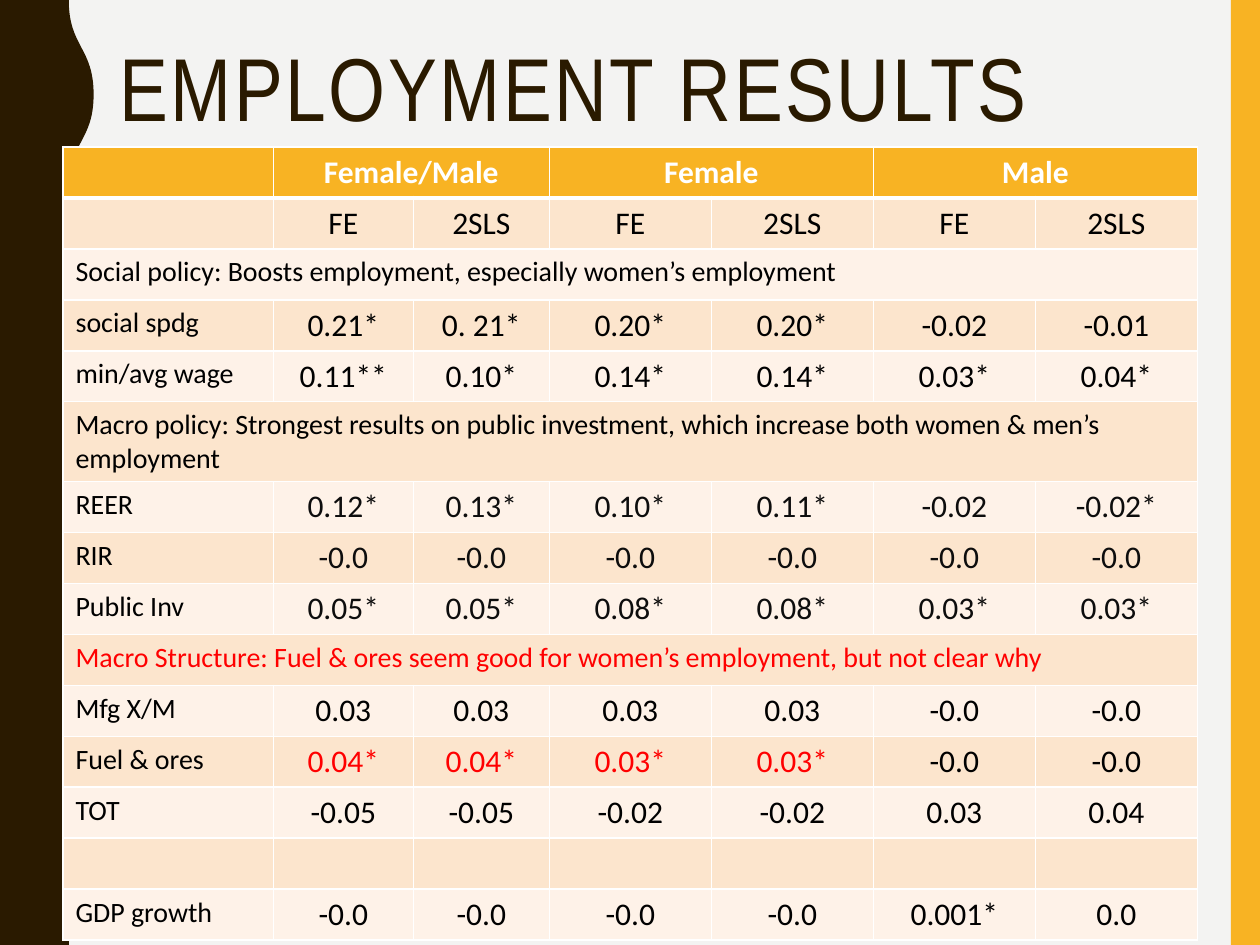
from lxml import etree
from pptx import Presentation
from pptx import util as u
from pptx.dml.color import RGBColor
from pptx.enum import shapes, text
from pptx.oxml.ns import qn

TITLE = "EMPLOYMENT RESULTS"
GROUPS = ["Female/Male", "Female", "Male"]
METHODS = ["FE", "2SLS"]
ROWS = [
    ("Social policy: Boosts employment, especially women’s employment",),
    ("social spdg", "0.21*", "0. 21*", "0.20*", "0.20*", "-0.02", "-0.01"),
    ("min/avg wage", "0.11**", "0.10*", "0.14*", "0.14*", "0.03*", "0.04*"),
    ("Macro policy: Strongest results on public investment, "
     "which increase both women & men’s employment",),
    ("REER", "0.12*", "0.13*", "0.10*", "0.11*", "-0.02", "-0.02*"),
    ("RIR",) + ("-0.0",) * 6,
    ("Public Inv", "0.05*", "0.05*", "0.08*", "0.08*", "0.03*", "0.03*"),
    ("Macro Structure: Fuel & ores seem good for women’s employment, but not clear why",),
    ("Mfg X/M", "0.03", "0.03", "0.03", "0.03", "-0.0", "-0.0"),
    ("Fuel & ores", "0.04*", "0.04*", "0.03*", "0.03*", "-0.0", "-0.0"),
    ("TOT", "-0.05", "-0.05", "-0.02", "-0.02", "0.03", "0.04"),
    ("",) * 7,
    ("GDP growth", "-0.0", "-0.0", "-0.0", "-0.0", "0.001*", "0.0"),
]
SOFT_ROWS = {"REER", "RIR", "Public Inv"}
ALERT_SECTION = "Macro Structure"
ALERT_ROW, ALERT_COLUMNS = "Fuel & ores", range(1, 5)

THEME = {
    "paper": "F3F3F2", "dark": "2A1A00", "accent": "F8B323", "white": "FFFFFF",
    "bands": ("FEF2E8", "FCE5CD"), "ink": "000000", "soft": "0D0D0D", "alert": "FF0000",
    "title_font": "Arial Narrow", "body_font": "Calibri",
    "title_size": 51, "label_size": 16, "value_size": 18,
}
WIDTH, HEIGHT = 720, 540
STRIPE_WIDTH = 16.56
TABLE_LEFT, TABLE_TOP, TABLE_HEIGHT = 36, 84, 454.32
COLUMN_WIDTHS = [120.2, 80, 77.7] + [92.6] * 4
ROW_HEIGHT = 29.12
WAVE_INNER, WAVE_OUTER, WAVE_STEP = 39.3, 53.5, 54


def colour(name):
    return RGBColor.from_string(THEME.get(name, name))


def paint(target, name):
    target.fill.solid()
    target.fill.fore_color.rgb = colour(name)


def write(frame, words, font="body_font", size="value_size", ink="ink",
          bold=False, align=text.PP_ALIGN.LEFT, line=None, tracking=None):
    para = frame.paragraphs[0]
    para.alignment = align
    if line:
        para.line_spacing = line
    span = para.add_run()
    span.text = words
    span.font.name = THEME[font]
    span.font.size = u.Pt(THEME[size])
    span.font.bold = bold
    span.font.color.rgb = colour(ink)
    if tracking:
        span.font._element.set("spc", str(int(tracking * 100)))


def add_border(cell, side, weight):
    line = etree.SubElement(cell._tc.get_or_add_tcPr(), qn(f"a:ln{side}"), w=str(u.Pt(weight)))
    fill = etree.SubElement(line, qn("a:solidFill"))
    etree.SubElement(fill, qn("a:srgbClr"), val=THEME["white"])


def finish(shape, name):
    paint(shape, name)
    shape.line.fill.background()
    shape.shadow.inherit = False


def bend(line, start, end):
    middle = (start[1] + end[1]) // 2
    curve = etree.Element(qn("a:cubicBezTo"))
    for x, y in ((start[0], middle), (end[0], middle), end):
        etree.SubElement(curve, qn("a:pt"), x=str(x), y=str(y))
    line.getparent().replace(line, curve)


def add_wave(page):
    crests = [(u.Pt(WAVE_OUTER if step % 2 else WAVE_INNER), u.Pt(step * WAVE_STEP))
              for step in range(HEIGHT // WAVE_STEP + 1)]
    builder = page.shapes.build_freeform(*crests[0], scale=1.0)
    builder.add_line_segments(crests[1:] + [(0, u.Pt(HEIGHT)), (0, 0)])
    wave = builder.convert_to_shape()
    lines = list(wave._element.iter(qn("a:lnTo")))
    for line, start, end in zip(lines, crests, crests[1:]):
        bend(line, start, end)
    finish(wave, "dark")


def add_backdrop(page):
    page.background.fill.solid()
    page.background.fill.fore_color.rgb = colour("paper")
    stripe = page.shapes.add_shape(
        shapes.MSO_SHAPE.RECTANGLE, u.Pt(WIDTH - STRIPE_WIDTH), 0, u.Pt(STRIPE_WIDTH), u.Pt(HEIGHT))
    finish(stripe, "accent")
    add_wave(page)


def add_title(page):
    box = page.shapes.add_textbox(u.Pt(61.2), u.Pt(21.6), u.Pt(622.8), u.Pt(62.64))
    box.text_frame.word_wrap = True
    box.text_frame.vertical_anchor = text.MSO_ANCHOR.MIDDLE
    write(box.text_frame, TITLE, font="title_font", size="title_size", ink="dark",
          line=0.9, tracking=1.5)


def style_cells(grid):
    for row, cells in enumerate(grid.rows):
        for cell in cells.cells:
            for side in "LRTB":
                heavy = (row, side) in ((0, "B"), (1, "T"))
                add_border(cell, side, 3 if heavy else 1)
            paint(cell, "accent" if row == 0 else THEME["bands"][row % 2])


def value_ink(label, column):
    if label == ALERT_ROW and column in ALERT_COLUMNS:
        return "alert"
    return "soft" if label in SOFT_ROWS else "ink"


def add_results(page):
    row_count, column_count = len(ROWS) + 2, len(COLUMN_WIDTHS)
    holder = page.shapes.add_table(
        row_count, column_count, u.Pt(TABLE_LEFT), u.Pt(TABLE_TOP),
        u.Pt(sum(COLUMN_WIDTHS)), u.Pt(TABLE_HEIGHT))
    grid = holder.table
    for column, width in zip(grid.columns, COLUMN_WIDTHS):
        column.width = u.Pt(width)
    for row in grid.rows:
        row.height = u.Pt(ROW_HEIGHT)
    holder.height = u.Pt(TABLE_HEIGHT)
    style_cells(grid)

    centre = text.PP_ALIGN.CENTER
    for index, group in enumerate(GROUPS):
        first = 1 + index * len(METHODS)
        grid.cell(0, first).merge(grid.cell(0, first + len(METHODS) - 1))
        write(grid.cell(0, first).text_frame, group, ink="white", bold=True, align=centre)
        for offset, method in enumerate(METHODS):
            write(grid.cell(1, first + offset).text_frame, method, align=centre)

    for row, (label, *values) in enumerate(ROWS, start=2):
        if not values:
            grid.cell(row, 0).merge(grid.cell(row, column_count - 1))
        if label:
            ink = "alert" if label.startswith(ALERT_SECTION) else "ink"
            write(grid.cell(row, 0).text_frame, label, size="label_size", ink=ink)
        for column, value in enumerate(values, start=1):
            if value:
                write(grid.cell(row, column).text_frame, value,
                      ink=value_ink(label, column), align=centre)


def main():
    deck = Presentation()
    deck.slide_width, deck.slide_height = u.Pt(WIDTH), u.Pt(HEIGHT)
    page = deck.slides.add_slide(deck.slide_layouts[6])
    add_backdrop(page)
    add_title(page)
    add_results(page)
    deck.save("out.pptx")


if __name__ == "__main__":
    main()
